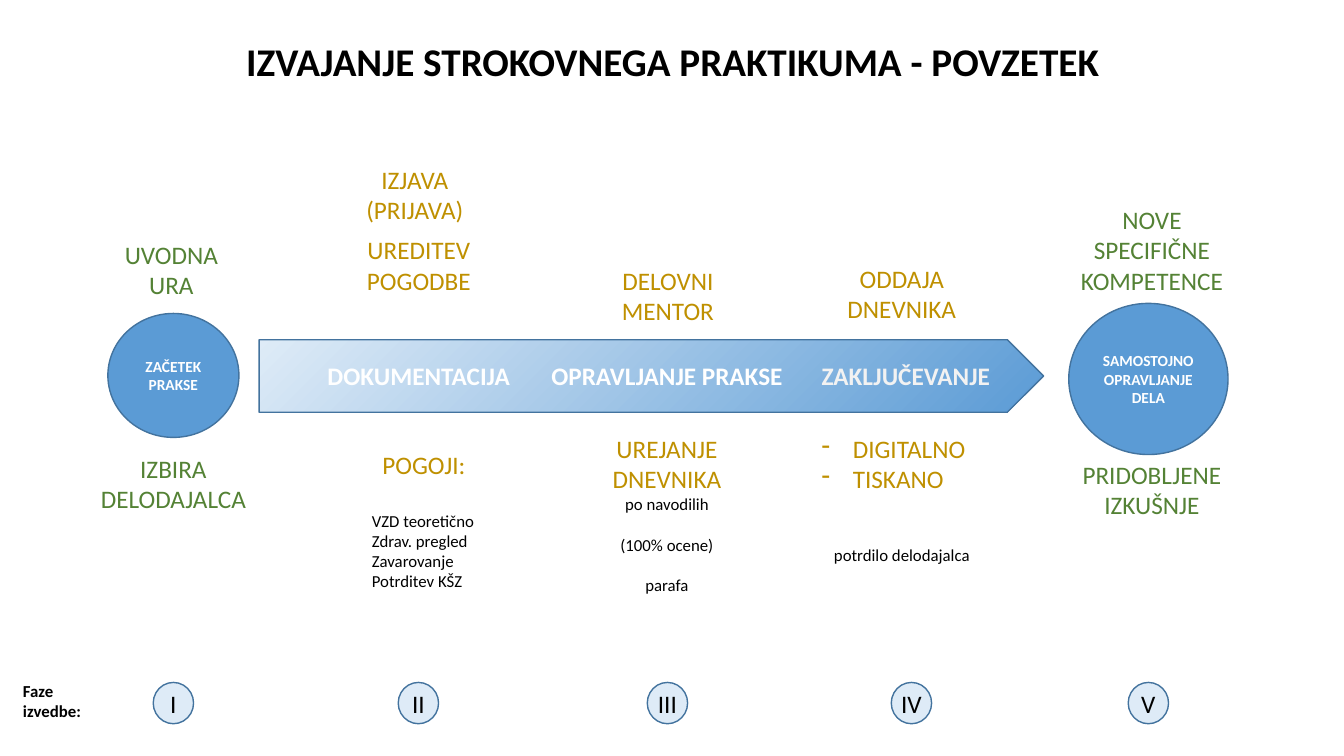
import pptx
import pptx.util
from pptx.dml.color import RGBColor
from pptx.enum.shapes import MSO_SHAPE
from pptx.enum.text import MSO_ANCHOR, PP_ALIGN
from pptx.oxml.xmlchemy import OxmlElement
from pptx.util import Inches

BLACK = RGBColor(0x00, 0x00, 0x00)
WHITE = RGBColor(0xFF, 0xFF, 0xFF)
OFF_WHITE = RGBColor(0xF2, 0xF2, 0xF2)
BLUE = RGBColor(0x5B, 0x9B, 0xD5)
PALE_BLUE = RGBColor(0xDE, 0xEB, 0xF7)
OUTLINE = RGBColor(0x43, 0x73, 0x9E)
GREEN = RGBColor(0x54, 0x82, 0x35)
GOLD = RGBColor(0xBF, 0x90, 0x00)

LEFT, CENTER = PP_ALIGN.LEFT, PP_ALIGN.CENTER

HEADING_SIZE, DETAIL_SIZE = 18, 12
HEADING_GAP, DETAIL_GAP = 22, 14.6  # one line of each size, in points


def style(paragraph, size, color, bold=False, align=LEFT, gap=0):
    paragraph.alignment = align
    paragraph.space_before = pptx.util.Pt(gap)
    font = paragraph.font
    font.name = "Calibri"
    font.size = pptx.util.Pt(size)
    font.color.rgb = color
    font.bold = bold


def add_text(slide, box, lines, size, color, bold=False, align=LEFT):
    """Add a text box with one paragraph per line and return its text frame."""
    frame = slide.shapes.add_textbox(*map(Inches, box)).text_frame
    frame.word_wrap = True
    for index, line in enumerate(lines):
        paragraph = frame.add_paragraph() if index else frame.paragraphs[0]
        paragraph.text = line
        style(paragraph, size, color, bold, align)
    return frame


def add_details(frame, details, align):
    """Append small black lines, given as (text, gap before in points)."""
    for text, gap in details:
        paragraph = frame.add_paragraph()
        paragraph.text = text
        style(paragraph, DETAIL_SIZE, BLACK, align=align, gap=gap)


def add_dash(paragraph):
    properties = paragraph._p.get_or_add_pPr()
    properties.set("marL", str(Inches(0.31)))
    properties.set("indent", str(-Inches(0.31)))
    dash = OxmlElement("a:buChar")
    dash.set("char", "-")
    properties.append(dash)


def add_outlined(slide, kind, box):
    shape = slide.shapes.add_shape(kind, *map(Inches, box))
    shape.shadow.inherit = False
    shape.line.color.rgb = OUTLINE
    shape.line.width = pptx.util.Pt(1)
    return shape


def add_circle(slide, kind, box, fill, text, size, color, bold=False, inset=0.1):
    circle = add_outlined(slide, kind, box)
    circle.fill.solid()
    circle.fill.fore_color.rgb = fill
    frame = circle.text_frame
    frame.word_wrap = True
    frame.margin_left = frame.margin_right = Inches(inset)
    frame.margin_top = frame.margin_bottom = Inches(inset / 2)
    frame.vertical_anchor = MSO_ANCHOR.MIDDLE
    frame.text = text
    style(frame.paragraphs[0], size, color, bold, CENTER)


def add_process_arrow(slide):
    arrow = add_outlined(slide, MSO_SHAPE.PENTAGON, (2.57, 3.37, 7.78, 0.72))
    arrow.fill.gradient()
    arrow.fill.gradient_angle = 315
    for stop, color in zip(arrow.fill.gradient_stops, (PALE_BLUE, BLUE)):
        stop.color.rgb = color
    for left, width, stage, color in (
        (3.15, 2.1, "DOKUMENTACIJA", WHITE),
        (5.37, 2.55, "OPRAVLJANJE PRAKSE", WHITE),
        (8.05, 1.97, "ZAKLJUČEVANJE", OFF_WHITE),
    ):
        add_text(slide, (left, 3.53, width, 0.4), [stage], HEADING_SIZE, color, bold=True)


def add_endpoints(slide):
    for box, text in (
        ((1.07, 3.11, 1.3, 1.23), "ZAČETEK PRAKSE"),
        ((10.6, 3.01, 1.58, 1.5), "SAMOSTOJNO OPRAVLJANJE DELA"),
    ):
        add_circle(slide, MSO_SHAPE.FLOWCHART_CONNECTOR, box, BLUE, text, 11, WHITE, bold=True)


def add_headings(slide):
    for box, lines, color in (
        ((1.05, 2.32, 1.3, 0.71), ["UVODNA URA"], GREEN),
        ((0.87, 4.45, 1.7, 0.71), ["IZBIRA DELODAJALCA"], GREEN),
        ((3.5, 1.58, 1.23, 0.71), ["IZJAVA", "(PRIJAVA)"], GOLD),
        ((3.54, 2.28, 1.23, 0.71), ["UREDITEV POGODBE"], GOLD),
        ((6.01, 2.58, 1.23, 0.71), ["DELOVNI MENTOR"], GOLD),
        ((8.18, 2.56, 1.53, 0.71), ["ODDAJA", "DNEVNIKA"], GOLD),
        ((10.6, 1.98, 1.65, 1.01), ["NOVE SPECIFIČNE KOMPETENCE"], GREEN),
        ((10.6, 4.51, 1.65, 0.71), ["PRIDOBLJENE IZKUŠNJE"], GREEN),
    ):
        add_text(slide, box, lines, HEADING_SIZE, color, align=CENTER)


def add_requirements(slide):
    conditions = add_text(slide, (3.59, 4.41, 1.23, 1.51), ["POGOJI:"],
                          HEADING_SIZE, GOLD, align=CENTER)
    add_details(conditions, [("VZD teoretično", HEADING_GAP), ("Zdrav. pregled", 0),
                             ("Zavarovanje", 0), ("Potrditev KŠZ", 0)], LEFT)

    diary = add_text(slide, (5.96, 4.25, 1.31, 1.72), ["UREJANJE\vDNEVNIKA"],
                     HEADING_SIZE, GOLD, align=CENTER)
    add_details(diary, [("po navodilih", 0), ("(100% ocene)", DETAIL_GAP),
                        ("parafa", DETAIL_GAP)], CENTER)

    submission = add_text(slide, (8.05, 4.25, 1.79, 1.41), ["DIGITALNO", "TISKANO"],
                          HEADING_SIZE, GOLD)
    for paragraph in submission.paragraphs:
        add_dash(paragraph)
    add_details(submission, [("potrdilo delodajalca", HEADING_GAP + DETAIL_GAP)], CENTER)


def add_phases(slide):
    add_text(slide, (0.13, 6.7, 1.1, 0.5), ["Faze izvedbe:"], DETAIL_SIZE, BLACK, bold=True)
    for left, numeral in zip((1.52, 3.95, 6.42, 8.84, 11.19), ("I", "II", "III", "IV", "V")):
        add_circle(slide, MSO_SHAPE.OVAL, (left, 6.77, 0.4, 0.41), PALE_BLUE,
                   numeral, HEADING_SIZE, BLACK, inset=0)


def main():
    presentation = pptx.Presentation()
    presentation.slide_width = Inches(13.33)
    presentation.slide_height = Inches(7.5)
    slide = presentation.slides.add_slide(presentation.slide_layouts[6])

    add_text(slide, (0.34, 0.32, 12.66, 0.57),
             ["IZVAJANJE STROKOVNEGA PRAKTIKUMA - POVZETEK"], 28, BLACK, bold=True, align=CENTER)
    add_process_arrow(slide)
    add_endpoints(slide)
    add_headings(slide)
    add_requirements(slide)
    add_phases(slide)
    presentation.save("out.pptx")


if __name__ == "__main__":
    main()
